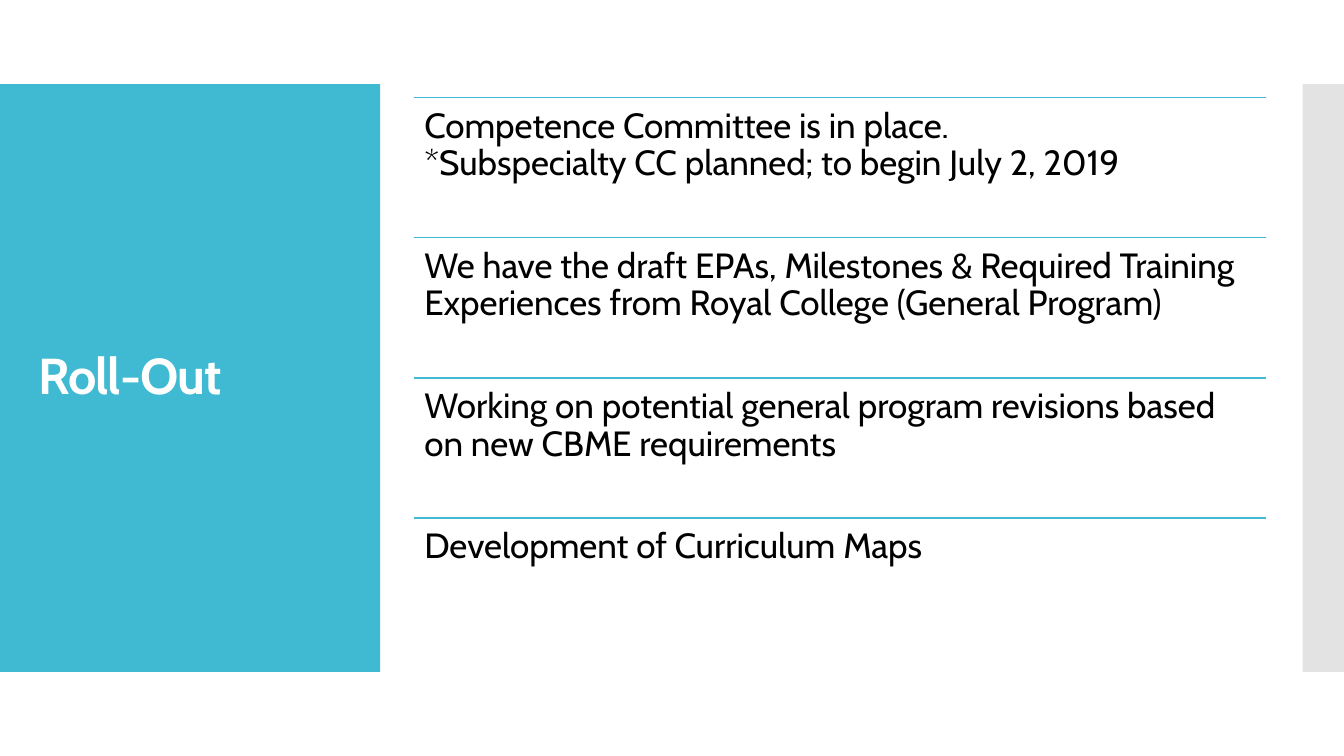
import lxml.etree
import pptx
import pptx.util
import pptx.dml.color
import pptx.enum.shapes
import pptx.enum.text
import pptx.oxml.ns
from dataclasses import dataclass
from typing import NamedTuple


@dataclass(frozen=True)
class Theme:
    font: str = "Cabin"
    accent: str = "40BAD2"
    edge: str = "C8C8C8"
    edge_opacity: int = 50
    heading: str = "FFFFFF"
    body: str = "000000"
    heading_size: float = 36
    body_size: float = 25
    rule_width: float = 0.85


class Box(NamedTuple):
    """A region in inches."""
    left: float
    top: float
    width: float
    height: float

    def emu(self):
        return [pptx.util.Inches(length) for length in self]

    def inset(self, dx, dy):
        return Box(self.left + dx, self.top + dy, self.width - 2 * dx, self.height - 2 * dy)

    def rows(self, count):
        step = self.height / count
        return [Box(self.left, self.top + i * step, self.width, step) for i in range(count)]


THEME = Theme()
SLIDE = Box(0, 0, 13.33, 7.5)
BAND_TOP, BAND_HEIGHT = SLIDE.height / 9, SLIDE.height * 7 / 9
TITLE_PANEL = Box(0, BAND_TOP, 3.77, BAND_HEIGHT)
EDGE_STRIP = Box(12.92, BAND_TOP, SLIDE.width - 12.92, BAND_HEIGHT)
STEP_LIST = Box(4.11, 0.97, 8.45, 5.56)

STEPS = [
    "Competence Committee is in place.\v*Subspecialty CC planned; to begin July 2, 2019",
    "We have the draft EPAs, Milestones & Required Training Experiences "
    "from Royal College (General Program)",
    "Working on potential general program revisions based on new CBME requirements",
    "Development of Curriculum Maps",
]


def rgb(color):
    return pptx.dml.color.RGBColor.from_string(color)


def add_xml(parent, tag, **attributes):
    lxml.etree.SubElement(parent, pptx.oxml.ns.qn(tag), attributes)


def write(frame, text, *, size, color, bold=False, tracking=0, anchor="TOP", inset=0.1):
    """Fill a text frame; a vertical tab breaks the line, tracking is in points."""
    frame.word_wrap = True
    frame.auto_size = pptx.enum.text.MSO_AUTO_SIZE.NONE
    frame.vertical_anchor = pptx.enum.text.MSO_ANCHOR[anchor]
    frame.margin_left = frame.margin_right = pptx.util.Inches(0.1)
    frame.margin_top = frame.margin_bottom = pptx.util.Inches(inset)
    paragraph = frame.paragraphs[0]
    paragraph.text = text
    paragraph.alignment = pptx.enum.text.PP_ALIGN.LEFT
    paragraph.line_spacing = 0.9
    paragraph.space_before = pptx.util.Pt(0)
    for run in paragraph.runs:
        run.font.name = THEME.font
        run.font.size = pptx.util.Pt(size)
        run.font.bold = bold
        run.font.color.rgb = rgb(color)
        if tracking:
            run.font._element.set("spc", str(round(tracking * 100)))


def add_panel(slide, box, color, opacity=100):
    panel = slide.shapes.add_shape(pptx.enum.shapes.MSO_SHAPE.RECTANGLE, *box.emu())
    panel.shadow.inherit = False
    panel.line.fill.background()
    panel.fill.solid()
    panel.fill.fore_color.rgb = rgb(color)
    if opacity < 100:
        swatch = panel._element.spPr.find(".//" + pptx.oxml.ns.qn("a:srgbClr"))
        add_xml(swatch, "a:alpha", val=str(opacity * 1000))


def add_title_panel(slide, box):
    add_panel(slide, box, THEME.accent)
    title = slide.shapes.title
    slide.shapes._spTree.append(title._element)  # brings the title in front of its panel
    title.left, title.top, title.width, title.height = box.inset(0.28, 0.4).emu()
    write(title.text_frame, "Roll-Out", size=THEME.heading_size, color=THEME.heading,
          bold=True, tracking=-0.6, anchor="MIDDLE", inset=0.05)


def add_rule(slide, box):
    """Draw a line along the top of the box."""
    left, top, width, _ = box.emu()
    rule = slide.shapes.add_connector(
        pptx.enum.shapes.MSO_CONNECTOR.STRAIGHT, left, top, left + width, top)
    rule.line.color.rgb = rgb(THEME.accent)
    rule.line.width = pptx.util.Pt(THEME.rule_width)
    add_xml(rule._element.spPr, "a:effectLst")


def add_step_list(slide, box, steps):
    for row, step in zip(box.rows(len(steps)), steps):
        add_rule(slide, row)
        entry = slide.shapes.add_textbox(*row.emu())
        write(entry.text_frame, step, size=THEME.body_size, color=THEME.body)


def main():
    deck = pptx.Presentation()
    deck.slide_width = pptx.util.Inches(SLIDE.width)
    deck.slide_height = pptx.util.Inches(SLIDE.height)
    slide = deck.slides.add_slide(deck.slide_layouts.get_by_name("Title Only"))
    add_panel(slide, EDGE_STRIP, THEME.edge, THEME.edge_opacity)
    add_title_panel(slide, TITLE_PANEL)
    add_step_list(slide, STEP_LIST, STEPS)
    deck.save("out.pptx")


if __name__ == "__main__":
    main()
